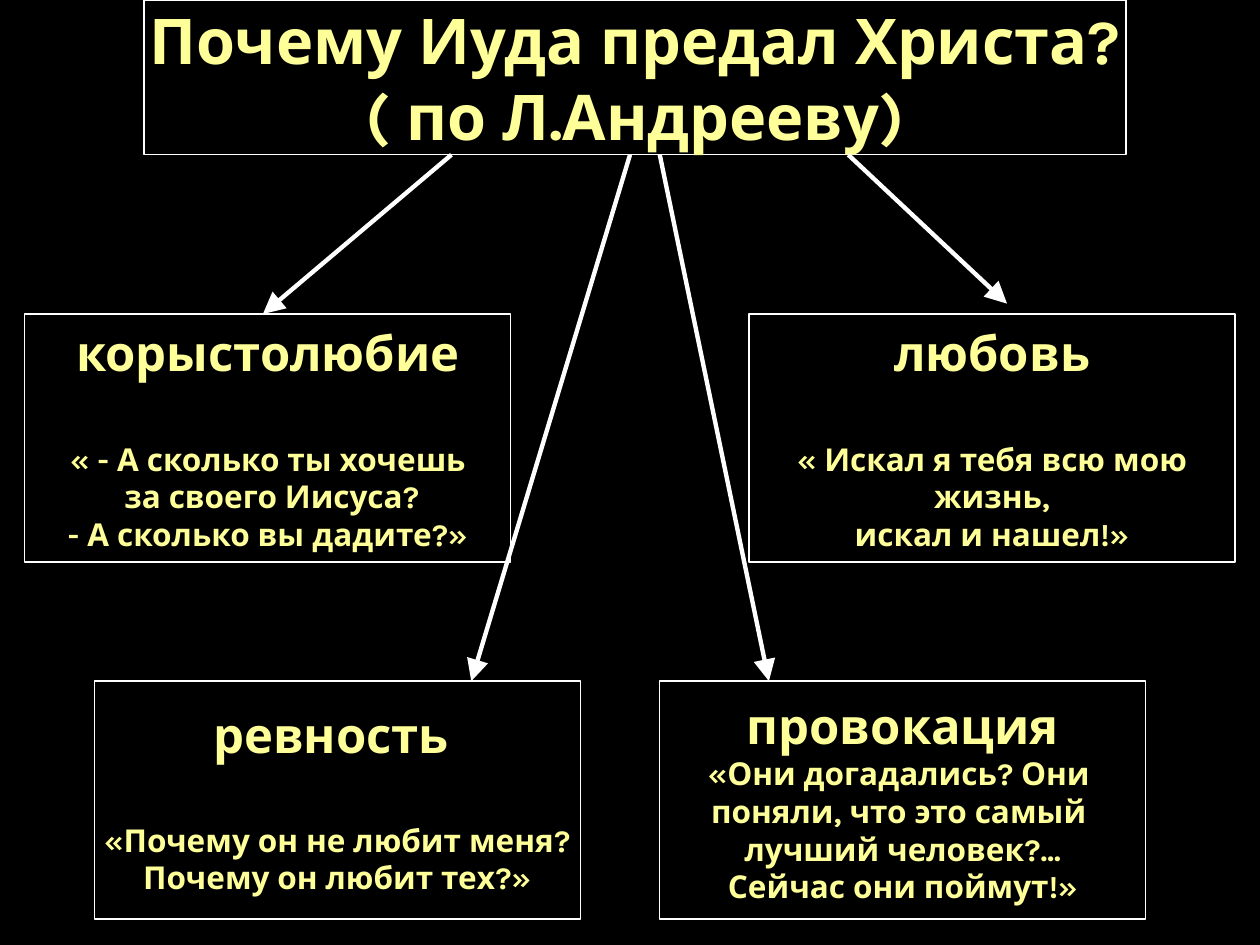
from lxml.etree import SubElement
from pptx import Presentation
from pptx.dml.color import RGBColor
from pptx.enum.shapes import MSO_CONNECTOR as Link, MSO_SHAPE as Shape
from pptx.enum.text import MSO_ANCHOR as Anchor, MSO_AUTO_SIZE as Fit, PP_ALIGN as Align
from pptx.oxml.ns import qn
from pptx.util import Cm, Pt

WIDE, TALL = 25.4, 19.05
BOX = 9.8                       # width of every reason box
HEAD_END = 3.12                 # lower edge of the title
ROW1, ROW2 = 6.33, 13.73        # tops of the two rows of boxes
HIGH1, HIGH2 = 5, 4.8           # heights of the boxes in each row
EDGE = 0.5                      # side margin of the upper row


def color(code):
    return RGBColor.from_string(code)


class Board:
    font, ink, line, back = "Karla", "FFFF99", "FFFFFF", "000000"

    def __init__(self, slide):
        self.slide = slide
        slide.background.fill.solid()
        slide.background.fill.fore_color.rgb = color(self.back)

    def frame(self, shape, lines, sizes):
        """Outline a shape and fill it with centred bold lines."""
        shape.fill.background()
        shape.line.color.rgb = color(self.line)
        shape.line.width = Pt(0.75)
        text = shape.text_frame
        text.text = "\n".join(lines)
        text.word_wrap = False
        text.auto_size = Fit.NONE
        text.vertical_anchor = Anchor.MIDDLE
        for para, size in zip(text.paragraphs, sizes):
            para.alignment = Align.CENTER
            font = para.font
            font.name, font.size, font.bold = self.font, Pt(size), True
            font.color.rgb = color(self.ink)

    def title(self, lines, x, y, w, h):
        shape = self.slide.shapes.title
        shape.left, shape.top, shape.width, shape.height = map(Cm, (x, y, w, h))
        self.frame(shape, lines, [36] * len(lines))
        shape.text_frame.margin_left = shape.text_frame.margin_right = 0

    def reason(self, name, quote, x, y, h, gap):
        """Add a box with a heading and a quote, gap points apart."""
        shape = self.slide.shapes.add_shape(
            Shape.RECTANGLE, Cm(x), Cm(y), Cm(BOX), Cm(h))
        shape.shadow.inherit = False
        self.frame(shape, [name, *quote], [28] + [18] * len(quote))
        shape.text_frame.paragraphs[1].space_before = Pt(gap)

    def arrow(self, x1, y1, x2, y2):
        link = self.slide.shapes.add_connector(
            Link.STRAIGHT, Cm(x1), Cm(y1), Cm(x2), Cm(y2))
        link.line.color.rgb = color(self.line)
        link.line.width = Pt(2.5)
        SubElement(link.line._get_or_add_ln(), qn("a:tailEnd"),
                   type="triangle", w="lg", len="lg")
        SubElement(link._element.spPr, qn("a:effectLst"))


def main():
    deck = Presentation()
    deck.slide_width, deck.slide_height = Cm(WIDE), Cm(TALL)
    board = Board(deck.slides.add_slide(deck.slide_layouts[5]))

    board.title(["Почему Иуда предал Христа?", "( по Л.Андрееву)"],
                2.9, 0, 19.8, HEAD_END)

    reasons = [
        ("корыстолюбие",
         ["« - А сколько ты хочешь", " за своего Иисуса?", "- А сколько вы дадите?»"],
         EDGE, ROW1, HIGH1, 33),
        ("ревность ",
         ["«Почему он не любит меня?", "Почему он любит тех?»"],
         1.9, ROW2, HIGH2, 33),
        ("провокация",
         ["«Они догадались? Они ", "поняли, что это самый ",
          "лучший человек?...", "Сейчас они поймут!»"],
         13.3, ROW2, HIGH2, 0),
        ("любовь",
         ["« Искал я тебя всю мою", " жизнь, ", "искал и нашел!»"],
         WIDE - EDGE - BOX, ROW1, HIGH1, 33),
    ]
    for reason in reasons:
        board.reason(*reason)

    ends = [(9.1, 5.3, ROW1), (17.1, 20.3, 6.12),
            (12.7, 9.5, ROW2), (13.3, 15.5, ROW2)]
    for start, end, low in ends:
        board.arrow(start, HEAD_END, end, low)

    deck.save("out.pptx")


if __name__ == "__main__":
    main()
